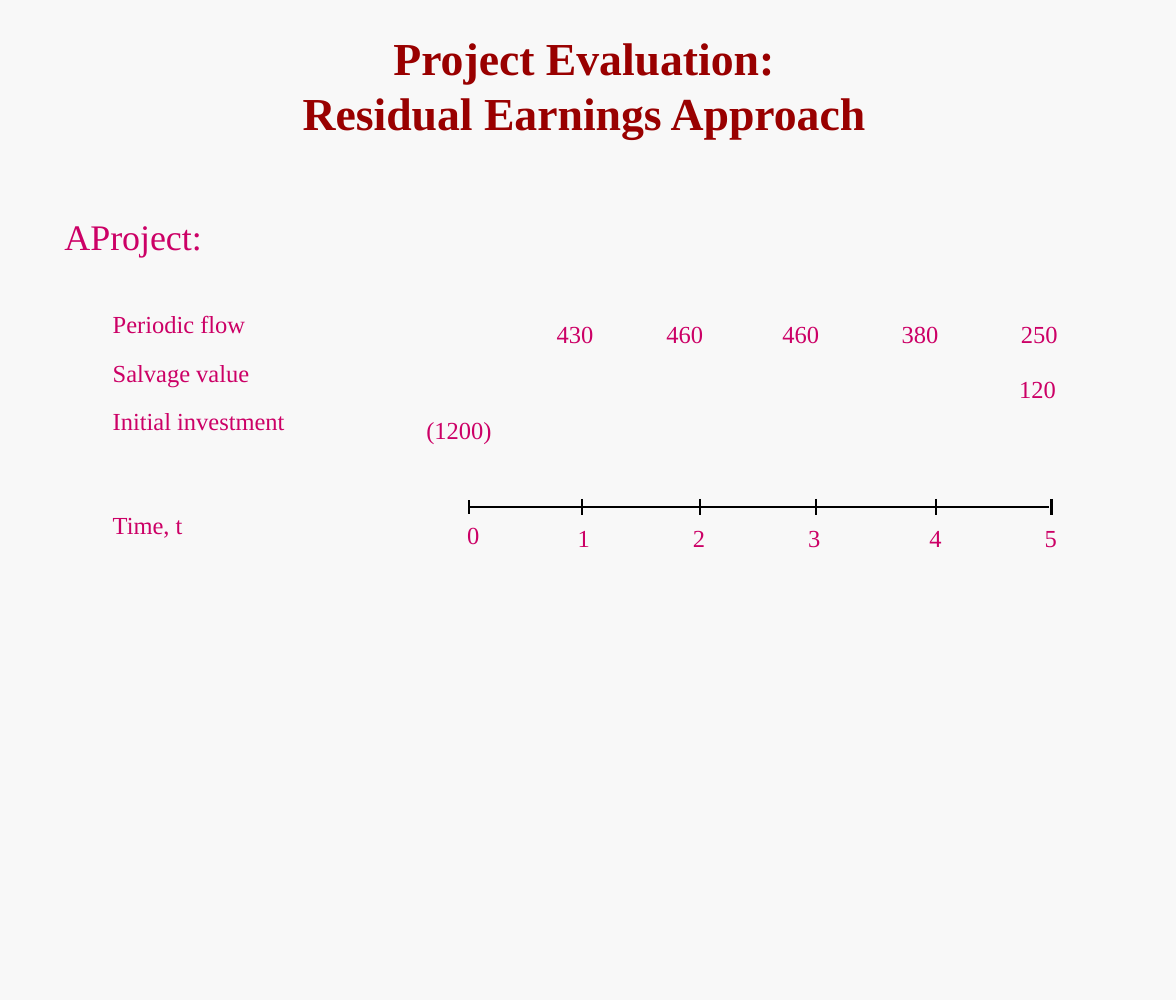
from lxml.etree import SubElement
from pptx import Presentation
from pptx.dml.color import RGBColor
from pptx.enum.shapes import MSO_CONNECTOR
from pptx.enum.text import PP_ALIGN
from pptx.oxml.ns import qn
from pptx.util import Pt

PAPER = RGBColor(0xF8, 0xF8, 0xF8)
RED = RGBColor(0x99, 0x00, 0x00)
PINK = RGBColor(0xCC, 0x00, 0x66)
BLACK = RGBColor(0x00, 0x00, 0x00)


class Deck:
    """Style and current slide."""
    font = "Times New Roman"

    def __init__(self, slide):
        self.slide = slide
        fill = slide.background.fill
        fill.solid()
        fill.fore_color.rgb = PAPER

    def text(self, lines, x, y, w, h, size=15, color=PINK,
             bold=False, align=PP_ALIGN.LEFT, gap=0):
        box = self.slide.shapes.add_textbox(Pt(x), Pt(y), Pt(w), Pt(h))
        frame = box.text_frame
        frame.word_wrap = True
        frame.margin_left = frame.margin_right = frame.margin_bottom = 0
        frame.margin_top = Pt(1)
        frame.text = "\n".join(lines)
        for i, par in enumerate(frame.paragraphs):
            par.alignment = align
            par.space_before = Pt(gap if i else 1)
            par.font.name = self.font
            par.font.size = Pt(size)
            par.font.bold = bold
            par.font.color.rgb = color

    def line(self, x1, y1, x2, y2, width):
        line = self.slide.shapes.add_connector(
            MSO_CONNECTOR.STRAIGHT, Pt(x1), Pt(y1), Pt(x2), Pt(y2))
        line.line.color.rgb = BLACK
        line.line.width = Pt(width)
        SubElement(line._element.spPr, qn("a:effectLst"))


def main():
    prs = Presentation()
    prs.slide_width, prs.slide_height = Pt(720), Pt(612)
    deck = Deck(prs.slides.add_slide(prs.slide_layouts[6]))

    # Title and heading
    deck.text(["Project Evaluation:", "Residual Earnings Approach"],
              183.5, 17.3, 348, 69, 28, RED, True, PP_ALIGN.CENTER)
    deck.text(["AProject:"], 39.5, 130.3, 88.6, 28, 22)

    # Row labels
    deck.text(["Periodic flow", "Salvage value"], 69, 188, 84, 50, gap=12)
    deck.text(["Initial investment"], 69, 247.7, 106, 20)
    deck.text(["Time, t"], 69, 311, 43, 20)

    # Time axis: tick x, half tick height, tick width, label x, label y
    axis = 310.3
    ticks = [(287.3, 4.3, 1.32, 286, 317.5),
             (356.4, 5, 1.44, 353.7, 319),
             (428.4, 5, 1.44, 424.2, 319),
             (499.7, 5, 1.44, 494.8, 319),
             (573.1, 5, 1.44, 569, 319),
             (643.7, 5, 1.44, 639.6, 319)]
    deck.line(287.3, axis, 642.2, axis, 1.32)
    for time, (x, half, width, left, top) in enumerate(ticks):
        deck.line(x, axis - half, x, axis + half, width)
        deck.text([str(time)], left, top, 9.4, 20)

    # Cash flows
    flows = [("430", 340.8), ("460", 408), ("460", 479),
             ("380", 552), ("250", 625)]
    for value, x in flows:
        deck.text([value], x, 194.4, 24.5, 20)
    deck.text(["120"], 624, 227.8, 24.5, 20)
    deck.text(["(1200)"], 261, 252.7, 42.5, 20)

    prs.save("out.pptx")


if __name__ == "__main__":
    main()
